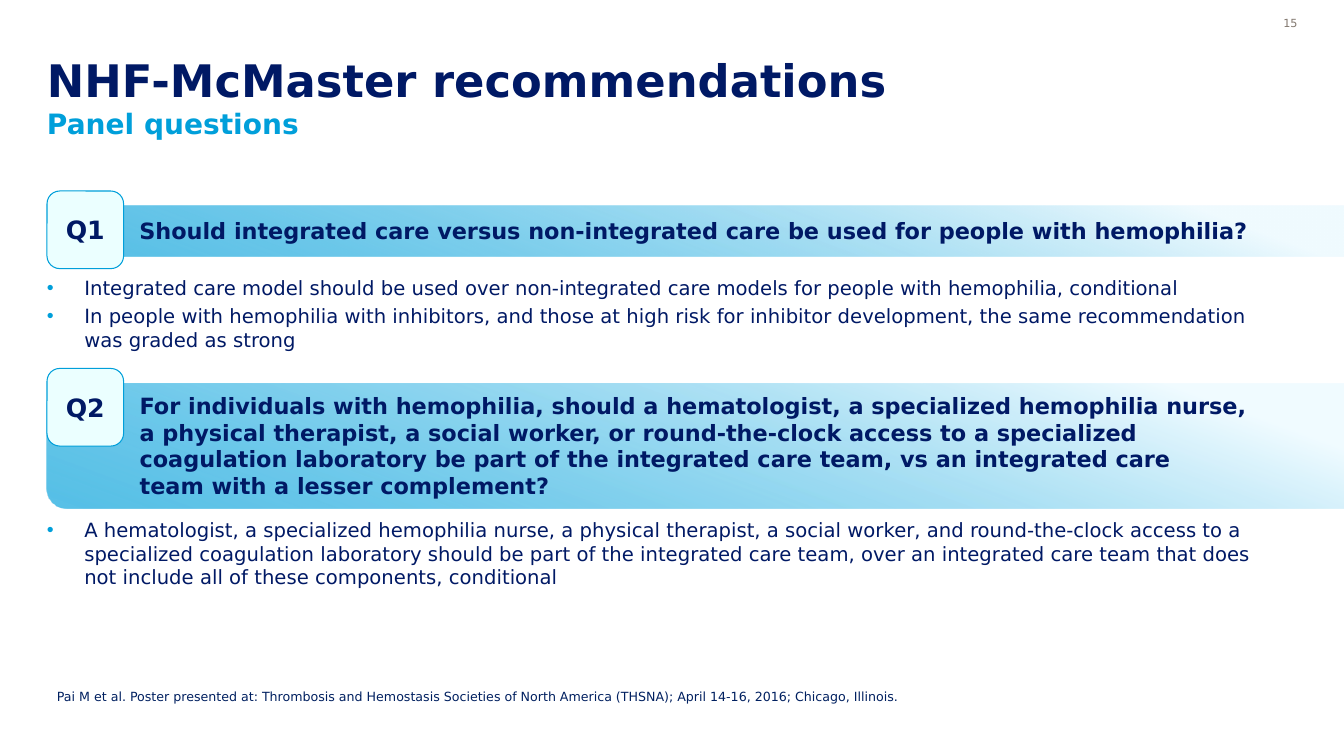
from lxml.etree import SubElement
from pptx import Presentation
from pptx.dml.color import RGBColor
from pptx.enum.shapes import MSO_SHAPE as Form
from pptx.enum.text import MSO_ANCHOR as Anchor, PP_ALIGN as Align
from pptx.oxml.ns import qn
from pptx.util import Inches, Pt

NAVY = RGBColor(0x00, 0x19, 0x65)
SKY = RGBColor(0x00, 0x9F, 0xDA)
PALE = RGBColor(0xF0, 0xFB, 0xFF)
ICE = RGBColor(0xEB, 0xFF, 0xFF)
GREY = RGBColor(0x82, 0x78, 0x6F)
INK = RGBColor(0x00, 0x20, 0x60)

deck = Presentation()
deck.slide_width, deck.slide_height = Inches(13.33), Inches(7.5)
page = deck.slides.add_slide(deck.slide_layouts[6])
COLUMN, ROW = deck.slide_width / 100, deck.slide_height / 100
LEFT, BLEED = 3.5, 101.6


def place(left, top, width, height, form=None, **frame_format):
    area = [int(left * COLUMN), int(top * ROW), int(width * COLUMN), int(height * ROW)]
    if form is None:
        box = page.shapes.add_textbox(*area)
    else:
        box = page.shapes.add_shape(form, *area)
        box.shadow.inherit = False
    for name, value in {"word_wrap": True, **frame_format}.items():
        setattr(box.text_frame, name, value)
    return box


def write(para, text, size, color=NAVY, bold=False, align=Align.LEFT):
    para.alignment = align
    for number, line in enumerate(text.split("\n")):
        if number:
            para.add_line_break()
        span = para.add_run()
        span.text = line
        span.font.color.rgb = color
        for name, value in {"name": "DejaVu Sans", "size": Pt(size), "bold": bold}.items():
            setattr(span.font, name, value)


FLUSH = {"margin_left": 0, "margin_top": 0, "margin_right": 0, "margin_bottom": 0}
MIDDLE = {"vertical_anchor": Anchor.MIDDLE}

title = place(LEFT, 8.93, 93.1, 7.6, **FLUSH, **MIDDLE).text_frame.paragraphs[0]
write(title, "NHF-McMaster recommendations", 32, bold=True)
title.add_line_break()
write(title, "Panel questions", 20, SKY, True)

page_number = place(93.17, 2, 3.38, 2, **FLUSH, **MIDDLE)
write(page_number.text_frame.paragraphs[0], "15", 8, GREY, align=Align.RIGHT)

sections = [
    ("Q1", 3.75, 27.2, 6.67, 36.53, 17.2,
     "Should integrated care versus non-integrated care be used for people with hemophilia?",
     ["Integrated care model should be used over non-integrated care models for people "
      "with hemophilia, conditional",
      "In people with hemophilia with inhibitors, and those at high risk for inhibitor "
      "development, the same recommendation was graded as strong"]),
    ("Q2", LEFT, 50.67, 16.53, 68.53, 20.1,
     "For individuals with hemophilia, should a hematologist, a specialized hemophilia nurse, \n"
     "a physical therapist, a social worker, or round-the-clock access to a specialized \n"
     "coagulation laboratory be part of the integrated care team, vs an integrated care \n"
     "team with a lesser complement?",
     ["A hematologist, a specialized hemophilia nurse, a physical therapist, a social worker, "
      "and round-the-clock access to a specialized coagulation laboratory should be part of "
      "the integrated care team, over an integrated care team that does not include all of "
      "these components, conditional"]),
]

for label, left, top, height, answer_top, answer_height, question, answers in sections:
    banner = place(left, top, BLEED - left, height, Form.ROUNDED_RECTANGLE, **MIDDLE)
    banner.line.fill.background()
    banner.fill.gradient()
    banner.fill.gradient_angle = 250
    for stop, position, color in zip(banner.fill.gradient_stops, (0.12, 1), (PALE, SKY)):
        stop.position, stop.color.rgb = position, color
    tints = list(banner.element.spPr.iter(qn("a:srgbClr")))
    SubElement(tints[-1], qn("a:alpha"), val="66000")
    para = banner.text_frame.paragraphs[0]
    write(para, question, 16, bold=True)
    para._p.get_or_add_pPr().set("marL", str(int(5.7 * COLUMN)))

    badge = place(LEFT, top - 1.93, 5.7, 10.27, Form.ROUNDED_RECTANGLE, **MIDDLE)
    badge.fill.solid()
    badge.fill.fore_color.rgb = ICE
    badge.line.color.rgb = SKY
    badge.line.width = Pt(0.75)
    write(badge.text_frame.paragraphs[0], label, 18, bold=True, align=Align.CENTER)

    body = place(LEFT, answer_top, 93.45, answer_height,
                 **{**FLUSH, "margin_right": Inches(0.24)}).text_frame
    for number, answer in enumerate(answers):
        para = body.add_paragraph() if number else body.paragraphs[0]
        write(para, answer, 14)
        if number:
            para.space_before = Pt(3)
        layout = para._p.get_or_add_pPr()
        indent = Inches(0.37)
        layout.set("marL", str(indent))
        layout.set("indent", str(-indent))
        SubElement(SubElement(layout, qn("a:buClr")), qn("a:srgbClr"), val=str(SKY))
        SubElement(layout, qn("a:buFont"), typeface="Arial")
        SubElement(layout, qn("a:buChar"), char="•")

source = place(LEFT, 90.53, 65.4, 3.33)
write(source.text_frame.paragraphs[0],
      "Pai M et al. Poster presented at: Thrombosis and Hemostasis Societies of North America "
      "(THSNA); April 14-16, 2016; Chicago, Illinois.", 9, INK)

deck.save("out.pptx")
